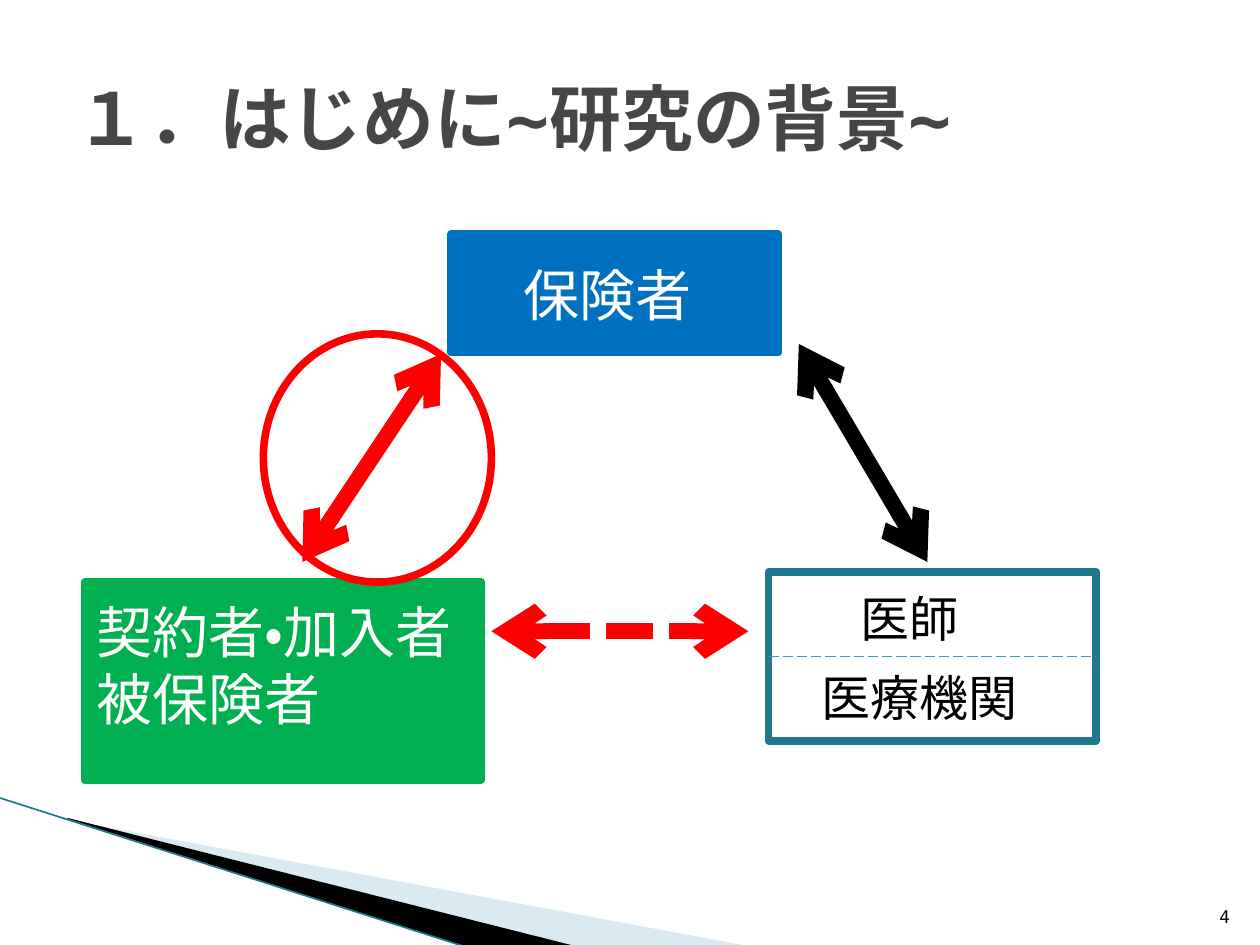
from lxml import etree
from pptx import Presentation
from pptx.dml.color import RGBColor
from pptx.enum import dml, lang, shapes, text
from pptx.oxml.ns import qn
from pptx.util import Inches, Pt

FONT = "DejaVu Sans Mono"
RED, BLACK, WHITE, TEAL = "FF0000", "000000", "FFFFFF", "21788D"


def color(value):
    return RGBColor.from_string(value)


def write(shape, lines, size, font_color, bold=False, align=text.PP_ALIGN.LEFT,
          anchor=text.MSO_ANCHOR.TOP):
    frame = shape.text_frame
    frame.word_wrap = True
    frame.auto_size = text.MSO_AUTO_SIZE.NONE
    frame.vertical_anchor = anchor
    for index, line in enumerate(lines):
        paragraph = frame.add_paragraph() if index else frame.paragraphs[0]
        paragraph.alignment = align
        run = paragraph.add_run()
        run.text = line
        run.font.name = FONT
        run.font.size = Pt(size)
        run.font.bold = bold
        run.font.color.rgb = color(font_color)
        run.font.language_id = lang.MSO_LANGUAGE_ID.JAPANESE


presentation = Presentation()
presentation.slide_width, presentation.slide_height = Inches(10), Inches(7.5)
slide = presentation.slides.add_slide(presentation.slide_layouts[5])

# Corner wedges: points, fill, opacity in percent
wedges = [
    ([(0.55, 6.51), (5.95, 7.51), (4.56, 7.51), (0.55, 6.5)], "A0CBDC", 40),
    ([(0.53, 6.49), (4.57, 7.51), (3.72, 7.52), (0.54, 6.5)], BLACK, 100),
]
for points, fill, opacity in wedges:
    start, *rest = [(Inches(x), Inches(y)) for x, y in points]
    builder = slide.shapes.build_freeform(*start)
    builder.add_line_segments(rest, close=True)
    wedge = builder.convert_to_shape()
    wedge.shadow.inherit = False
    wedge.fill.solid()
    wedge.fill.fore_color.rgb = color(fill)
    wedge.line.fill.background()
    if opacity < 100:
        fill_color = wedge.fill._xPr.find(qn("a:solidFill"))[0]
        etree.SubElement(fill_color, qn("a:alpha"), val=str(opacity * 1000))

# Title
title = slide.shapes.title
title.left, title.top = Inches(0.5), Inches(0.3)
title.width, title.height = Inches(9), Inches(1.25)
write(title, ["１．はじめに~研究の背景~"], 41, "464646", bold=True,
      anchor=text.MSO_ANCHOR.MIDDLE)

# Boxes of the three parties, and the ring around one relation
RECTANGLE, OVAL = shapes.MSO_SHAPE.RECTANGLE, shapes.MSO_SHAPE.OVAL
outlines = [
    (RECTANGLE, (3.58, 1.86, 2.6, 0.94), "0070C0", "0070C0"),
    (RECTANGLE, (0.67, 4.62, 3.15, 1.57), "00B050", "00B050"),
    (RECTANGLE, (6.1, 4.54, 2.6, 1.34), None, TEAL),
    (OVAL, (2.09, 2.65, 1.81, 1.97), None, RED),
]
for kind, place, fill, line in outlines:
    shape = slide.shapes.add_shape(kind, *map(Inches, place))
    shape.shadow.inherit = False
    if fill:
        shape.fill.solid()
        shape.fill.fore_color.rgb = color(fill)
    else:
        shape.fill.background()
    shape.line.color.rgb = color(line)
    shape.line.width = Pt(4.33)

# Labels
labels = [
    ((4.06, 2.02, 1.89, 0.64), ["保険者"], 32, WHITE),
    ((0.67, 4.69, 3.31, 1.18), ["契約者・加入者", "被保険者"], 32, WHITE),
    ((6.73, 4.62, 1.1, 0.57), ["医師"], 28, BLACK),
    ((6.42, 5.25, 2.36, 0.57), ["医療機関"], 28, BLACK),
]
for place, lines, size, font_color in labels:
    write(slide.shapes.add_textbox(*map(Inches, place)), lines, size, font_color)

page_number = slide.shapes.add_textbox(*map(Inches, (9.46, 7.01, 0.4, 0.4)))
write(page_number, ["4"], 10, BLACK, align=text.PP_ALIGN.RIGHT,
      anchor=text.MSO_ANCHOR.BOTTOM)

# Lines and two-way arrows: ends, colour, width, dash, arrowheads
DASH = dml.MSO_LINE
connectors = [
    ((-0.01, 6.33, 3.71, 7.52), TEAL, 0.95, None, False),
    ((6.1, 5.21, 8.7, 5.21), "2DA2BF", 0.75, DASH.LONG_DASH, False),
    ((6.34, 2.73, 7.36, 4.46), BLACK, 9, None, True),
    ((3.9, 5.01, 5.94, 5.01), RED, 9, DASH.SQUARE_DOT, True),
    ((3.5, 2.81, 2.4, 4.46), RED, 9, None, True),
]
for ends, line_color, width, dash, two_way in connectors:
    connector = slide.shapes.add_connector(
        shapes.MSO_CONNECTOR.STRAIGHT, *map(Inches, ends))
    connector.line.color.rgb = color(line_color)
    connector.line.width = Pt(width)
    if dash:
        connector.line.dash_style = dash
    if two_way:
        for end in ("a:headEnd", "a:tailEnd"):
            etree.SubElement(connector.line._get_or_add_ln(), qn(end), type="arrow")
    etree.SubElement(connector._element.spPr, qn("a:effectLst"))

presentation.save("out.pptx")
